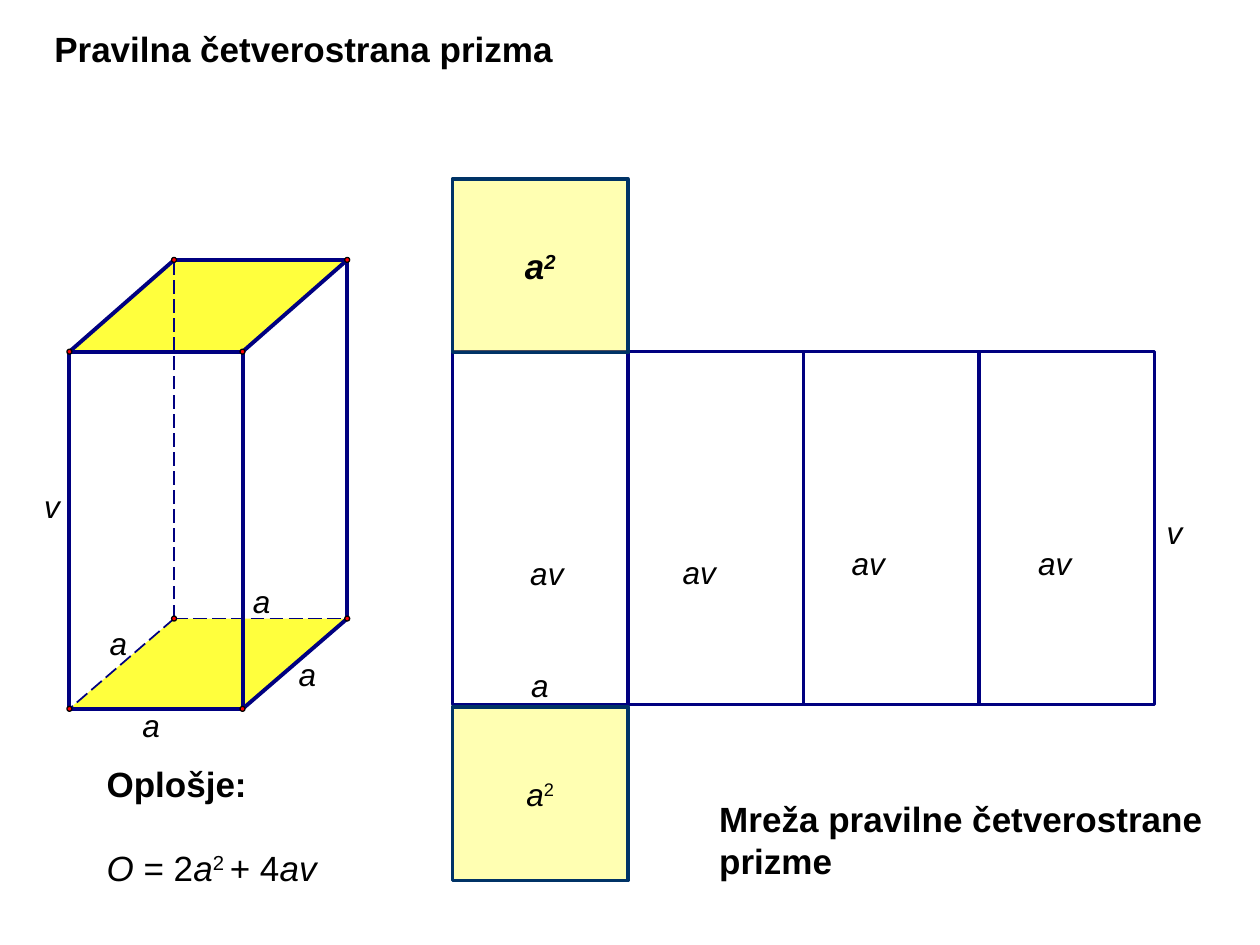
"""Build the slide on the regular four-sided prism and its net."""
from dataclasses import dataclass
from typing import Optional

from lxml import etree
from pptx import Presentation
from pptx import util as u
from pptx.dml.color import RGBColor
from pptx.enum import dml, shapes, text
from pptx.oxml.ns import qn

NAVY, TEAL, YELLOW, RED, BLACK = "000080", "003366", "FFFF00", "FF0000", "000000"


@dataclass
class Run:
    text: str
    size: int = 18
    bold: bool = False
    italic: bool = False
    raised: bool = False


@dataclass
class Label:
    text: str
    x: float
    y: float
    w: float
    wrap: bool = True


@dataclass
class Edge:
    start: str
    end: str
    hidden: bool = False


@dataclass
class Panel:
    x: float
    y: float
    w: float
    h: float
    line: str = NAVY
    fill: Optional[str] = None
    runs: tuple[Run, ...] = ()


VERTICES = {
    "A": (1.4, 14.29), "B": (4.89, 14.29), "C": (7.0, 12.47), "D": (3.51, 12.47),
    "E": (1.4, 7.09), "F": (4.89, 7.09), "G": (7.0, 5.24), "H": (3.51, 5.24),
}
FACES = ("EFGH", "ABCD")
EDGES = [Edge(*pair) for pair in ("AB", "BC", "AE", "BF", "CG", "EF", "FG", "GH", "HE")]
EDGES += [Edge(*pair, hidden=True) for pair in ("DA", "DC", "DH")]
DOT = 0.1

NET_X, NET_Y, SIDE, BASE_H, HEIGHT = 9.12, 7.09, 3.54, 3.5, 7.11
PANELS = [Panel(NET_X + i * SIDE, NET_Y, SIDE, HEIGHT) for i in range(4)]
PANELS += [
    Panel(NET_X, NET_Y + HEIGHT + 0.05, SIDE, BASE_H, TEAL, YELLOW,
          (Run("a", italic=True), Run("2", raised=True))),
    Panel(NET_X, NET_Y - BASE_H + 0.02, SIDE, BASE_H, TEAL, YELLOW,
          (Run("a", 20, True, True), Run("2", 20, True, True, True))),
]

LABELS = [Label("a", x, y, 1.32) for x, y in
          ((2.62, 14.1), (1.96, 12.45), (4.85, 11.61), (5.77, 13.08), (10.46, 13.31))]
LABELS += [Label("v", x, y, 0.97) for x, y in ((0.64, 9.7), (23.27, 10.21))]
LABELS += [Label("av", x, y, 1.22, False) for x, y in
           ((10.44, 11.05), (13.51, 11.02), (16.92, 10.85), (20.68, 10.85))]

FORMULA = (
    Run("O", 20, italic=True), Run(" = 2", 20), Run("a", 20, italic=True),
    Run("2 ", 20, raised=True), Run("+ 4", 20), Run("av", 20, italic=True),
)


def rgb(value: str) -> RGBColor:
    """Turn a hex string into a colour."""
    return RGBColor.from_string(value)


def add_runs(p, runs) -> None:
    """Append formatted runs to a paragraph."""
    for run in runs:
        r = p.add_run()
        r.text = run.text
        r.font.name = "Arial"
        r.font.size = u.Pt(run.size)
        r.font.bold = run.bold
        r.font.italic = run.italic
        r.font.color.rgb = rgb(BLACK)
        if run.raised:
            r._r.get_or_add_rPr().set("baseline", "30000")


def fill_shape(sp, value: str, opacity: int = 100) -> None:
    """Fill a shape with a colour of the given opacity in percent."""
    sp.shadow.inherit = False
    sp.fill.solid()
    sp.fill.fore_color.rgb = rgb(value)
    if opacity < 100:
        clr = sp.element.spPr.find(qn("a:solidFill"))[0]
        etree.SubElement(clr, qn("a:alpha")).set("val", str(opacity * 1000))


def add_text(s, x: float, y: float, w: float, h: float, *paragraphs, wrap: bool = True):
    """Add a text box holding one list of runs per paragraph."""
    tf = s.shapes.add_textbox(u.Cm(x), u.Cm(y), u.Cm(w), u.Cm(h)).text_frame
    tf.word_wrap = wrap
    for i, runs in enumerate(paragraphs):
        add_runs(tf.add_paragraph() if i else tf.paragraphs[0], runs)
    return tf


def add_title(s, title: str) -> None:
    """Place and format the title placeholder."""
    sp = s.shapes.title
    sp.left, sp.top, sp.width, sp.height = u.Cm(0.84), u.Cm(0.43), u.Cm(16.74), u.Cm(1.09)
    tf = sp.text_frame
    tf.auto_size = text.MSO_AUTO_SIZE.NONE
    tf.vertical_anchor = text.MSO_ANCHOR.TOP
    tf.paragraphs[0].alignment = text.PP_ALIGN.LEFT
    add_runs(tf.paragraphs[0], [Run(title, 20, bold=True)])


def add_face(s, face: str) -> None:
    """Draw a base of the prism through its named vertices."""
    points = [(u.Cm(x), u.Cm(y)) for x, y in (VERTICES[name] for name in face)]
    builder = s.shapes.build_freeform(*points[0])
    builder.add_line_segments(points[1:], close=True)
    sp = builder.convert_to_shape()
    fill_shape(sp, YELLOW, 76)
    sp.line.fill.background()


def add_edge(s, edge: Edge) -> None:
    """Draw a prism edge, dashed when hidden."""
    ends = [u.Cm(v) for name in (edge.start, edge.end) for v in VERTICES[name]]
    sp = s.shapes.add_connector(shapes.MSO_CONNECTOR.STRAIGHT, *ends)
    sp.line.color.rgb = rgb(NAVY)
    sp.line.width = u.Pt(1 if edge.hidden else 2.25)
    if edge.hidden:
        sp.line.dash_style = dml.MSO_LINE.LONG_DASH
    etree.SubElement(sp.element.spPr, qn("a:effectLst"))


def add_dot(s, x: float, y: float) -> None:
    """Mark a vertex."""
    sp = s.shapes.add_shape(shapes.MSO_SHAPE.OVAL, u.Cm(x - DOT / 2), u.Cm(y - DOT / 2),
                            u.Cm(DOT), u.Cm(DOT))
    fill_shape(sp, RED)
    sp.line.color.rgb = rgb(BLACK)
    sp.line.width = u.Pt(0)


def add_panel(s, panel: Panel) -> None:
    """Draw one rectangle of the net."""
    sp = s.shapes.add_shape(shapes.MSO_SHAPE.RECTANGLE, u.Cm(panel.x), u.Cm(panel.y),
                            u.Cm(panel.w), u.Cm(panel.h))
    sp.shadow.inherit = False
    if panel.fill:
        fill_shape(sp, panel.fill, 30)
    else:
        sp.fill.background()
    sp.line.color.rgb = rgb(panel.line)
    sp.line.width = u.Pt(2)
    tf = sp.text_frame
    tf.vertical_anchor = text.MSO_ANCHOR.MIDDLE
    tf.paragraphs[0].alignment = text.PP_ALIGN.CENTER
    add_runs(tf.paragraphs[0], panel.runs)


def main() -> None:
    """Assemble and save the slide."""
    prs = Presentation()
    prs.slide_width, prs.slide_height = u.Cm(25.4), u.Cm(19.05)
    s = prs.slides.add_slide(prs.slide_layouts[5])
    add_title(s, "Pravilna četverostrana prizma")
    for face in FACES:
        add_face(s, face)
    for edge in EDGES:
        add_edge(s, edge)
    for x, y in VERTICES.values():
        add_dot(s, x, y)
    for panel in PANELS:
        add_panel(s, panel)
    for label in LABELS:
        add_text(s, label.x, label.y, label.w, 1.02, [Run(label.text, italic=True)],
                 wrap=label.wrap)
    add_text(s, 14.25, 15.95, 11.1, 1.96,
             [Run("Mreža pravilne četverostrane prizme", 20, bold=True)])
    tf = add_text(s, 1.9, 15.24, 5.46, 2.82, [Run("Oplošje:", 20, bold=True)], FORMULA)
    tf.paragraphs[1].space_before = u.Pt(24)
    prs.save("out.pptx")


if __name__ == "__main__":
    main()
